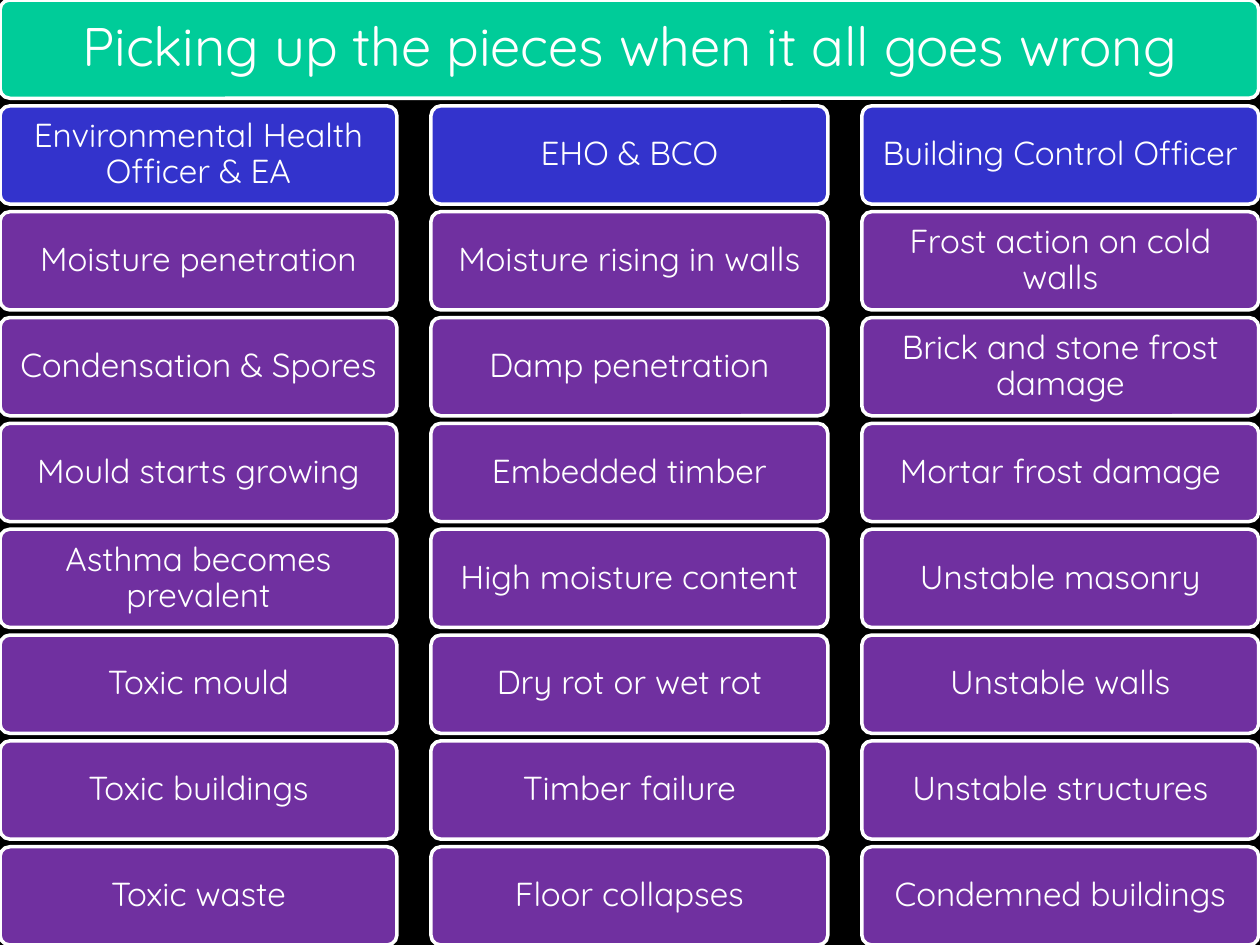
from pptx import Presentation
from pptx.dml.color import RGBColor
from pptx.enum import shapes, text
from pptx.util import Inches, Pt

TITLE = "Picking up the pieces when it all goes wrong"
COLUMNS = [
    ["Environmental Health Officer & EA", "Moisture penetration",
     "Condensation & Spores", "Mould starts growing",
     "Asthma becomes prevalent", "Toxic mould", "Toxic buildings",
     "Toxic waste"],
    ["EHO & BCO", "Moisture rising in walls", "Damp penetration",
     "Embedded timber", "High moisture content", "Dry rot or wet rot",
     "Timber failure", "Floor collapses"],
    ["Building Control Officer", "Frost action on cold walls",
     "Brick and stone frost damage", "Mortar frost damage",
     "Unstable masonry", "Unstable walls", "Unstable structures",
     "Condemned buildings"],
]
WIDTH, HEIGHT = 3.15, 0.78
COLUMN_STEP, ROW_STEP = 3.42, 0.84
GREEN, BLUE, PURPLE, WHITE, BLACK = "00CC99", "3333CC", "7030A0", "FFFFFF", "000000"


def paint(fill, color):
    fill.solid()
    fill.fore_color.rgb = RGBColor.from_string(color)


def write(sp, content, size=19, inset=0.08, color=WHITE):
    tf = sp.text_frame
    tf.text = content
    tf.word_wrap = True
    tf.auto_size = text.MSO_AUTO_SIZE.NONE
    tf.vertical_anchor = text.MSO_ANCHOR.MIDDLE
    tf.margin_left = tf.margin_right = Inches(inset)
    tf.margin_top = tf.margin_bottom = Inches(inset)
    p = tf.paragraphs[0]
    p.alignment = text.PP_ALIGN.CENTER
    p.line_spacing = 0.9
    p.font.name = "Quicksand"
    p.font.size = Pt(size)
    paint(p.font.fill, color)


def add_box(s, left, top, width, color):
    sp = s.shapes.add_shape(shapes.MSO_SHAPE.ROUNDED_RECTANGLE, Inches(left),
                            Inches(top), Inches(width), Inches(HEIGHT))
    sp.adjustments[0] = 0.1
    sp.shadow.inherit = False
    paint(sp.fill, color)
    paint(sp.line.fill, WHITE)
    sp.line.width = Pt(2)
    return sp


def add_title(s):
    """Lay the title placeholder over its green banner."""
    add_box(s, 0, 0, 9.99, GREEN)
    title = s.shapes.title
    title.left = title.top = Inches(0.02)
    title.width, title.height = Inches(9.95), Inches(0.74)
    write(title, TITLE, size=31, inset=0.13)
    s.shapes.element.append(title.element)  # bring to front


def add_column(s, left, labels):
    for row, label in enumerate(labels, start=1):
        color = BLUE if row == 1 else PURPLE
        write(add_box(s, left, row * ROW_STEP, WIDTH, color), label)


def main():
    prs = Presentation()
    prs.slide_width, prs.slide_height = Inches(10), Inches(7.5)
    s = prs.slides.add_slide(prs.slide_layouts[5])
    paint(s.background.fill, BLACK)
    add_title(s)
    for i, labels in enumerate(COLUMNS):
        add_column(s, i * COLUMN_STEP, labels)
    prs.save("out.pptx")


if __name__ == "__main__":
    main()
